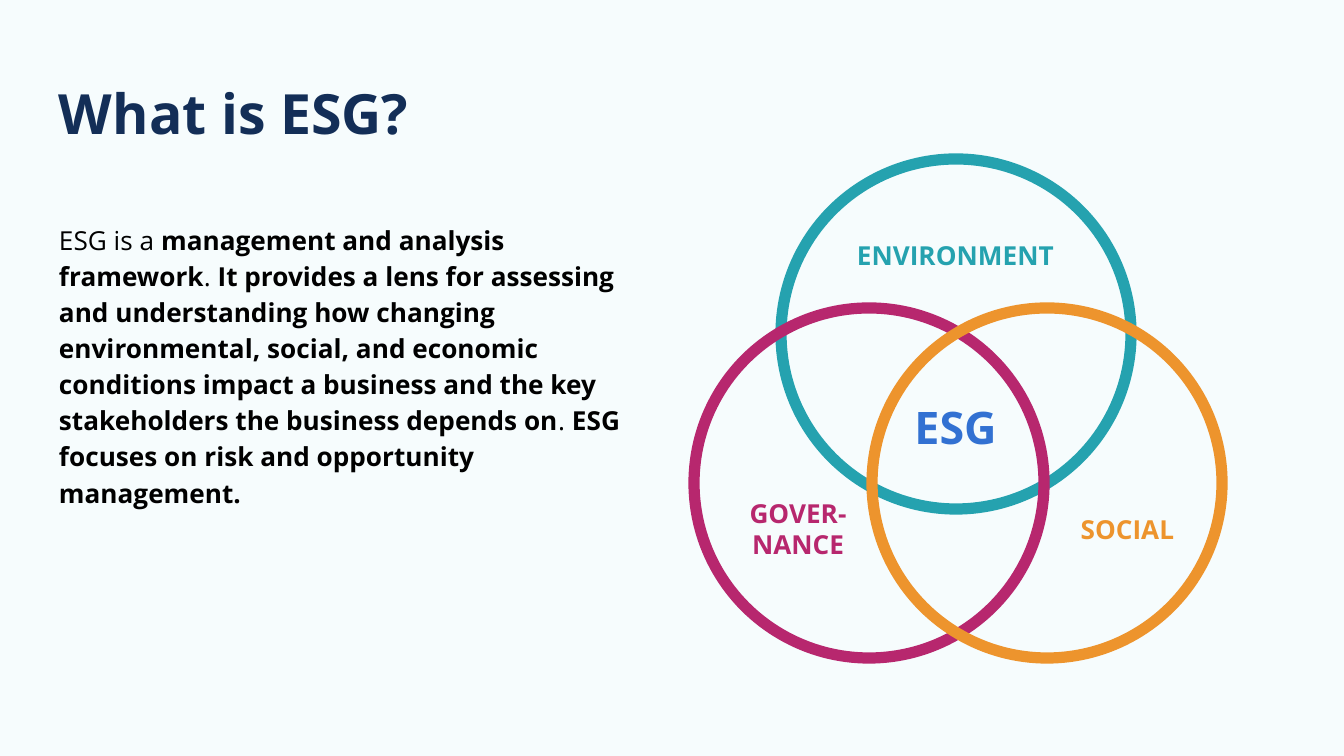
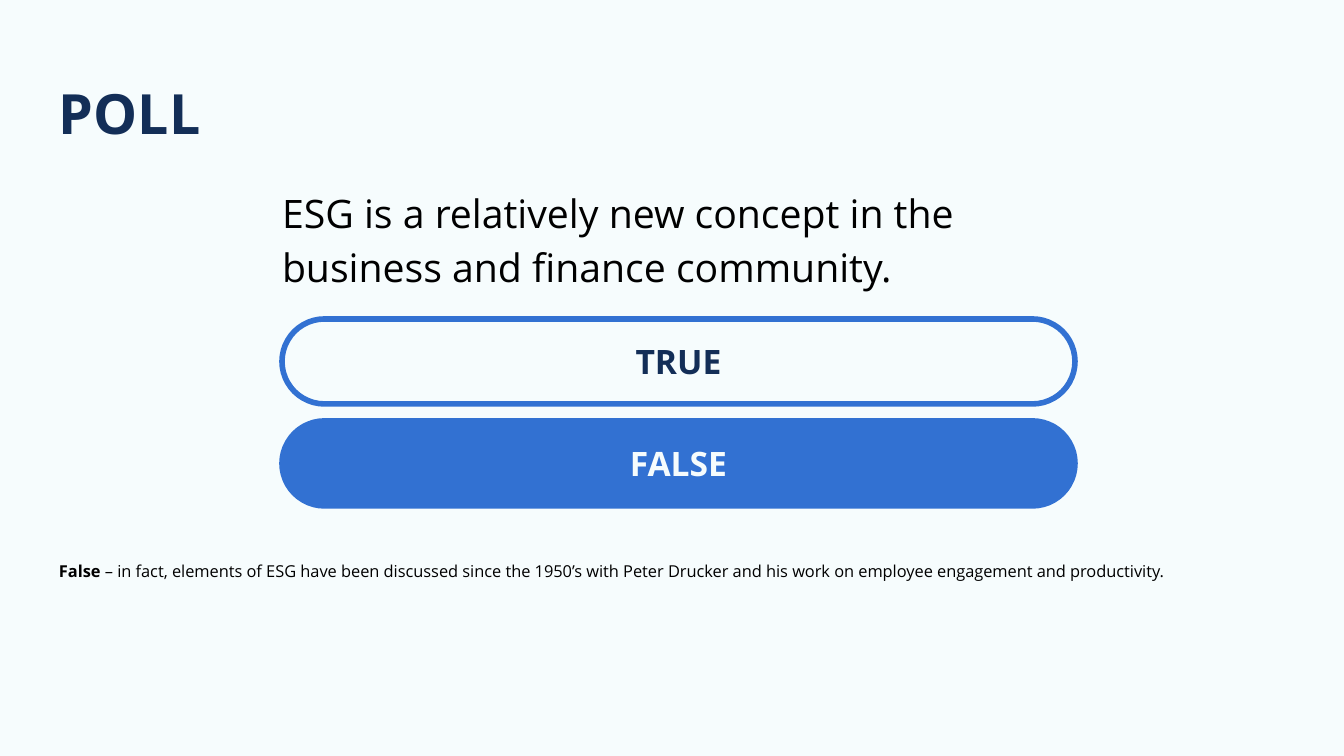
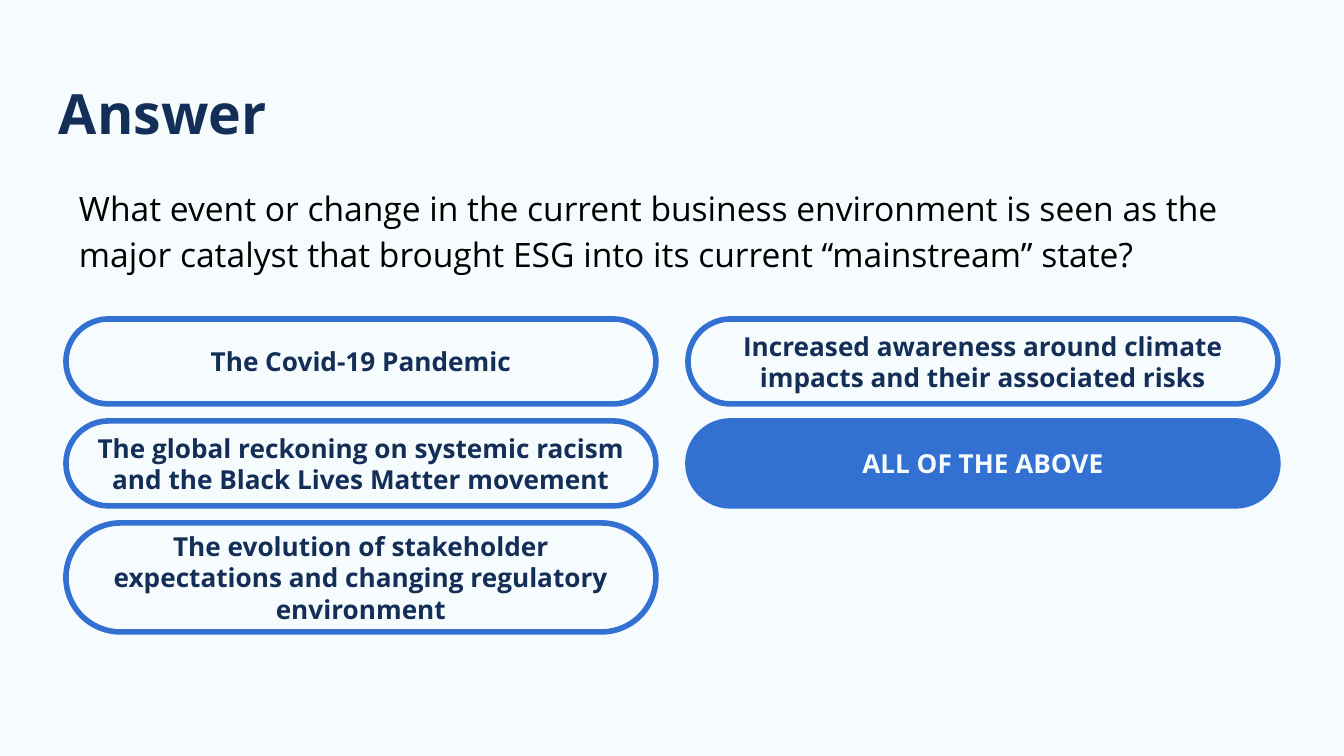
import pptx
import pptx.dml.color
import pptx.enum.shapes
import pptx.enum.text
import pptx.oxml.xmlchemy
import pptx.util
from lxml import etree

RGBColor = pptx.dml.color.RGBColor
MSO_SHAPE = pptx.enum.shapes.MSO_SHAPE
ANCHOR = pptx.enum.text.MSO_ANCHOR
ALIGN = pptx.enum.text.PP_ALIGN

EMU_PER_PX = 914400 / 134.4
SLIDE_WIDTH, SLIDE_HEIGHT = 1344, 756
INSET = 13
FONT = "Open Sans"

BACKGROUND = RGBColor(0xF6, 0xFC, 0xFD)
NAVY = RGBColor(0x13, 0x2E, 0x57)
BLUE = RGBColor(0x32, 0x71, 0xD2)
BLACK = RGBColor(0x00, 0x00, 0x00)
TEAL = RGBColor(0x25, 0xA2, 0xAF)
MAGENTA = RGBColor(0xB7, 0x27, 0x6E)
ORANGE = RGBColor(0xED, 0x94, 0x2D)

TITLE_BOX = (46, 66, 1253, 85)
CIRCLE = 350
PILL_TOP, PILL_HEIGHT, PILL_GAP = 319, 85, 17
PILL_PITCH = PILL_HEIGHT + PILL_GAP
TITLE_AND_CONTENT, TWO_CONTENT = 1, 3


def px(length):
    return pptx.util.Emu(round(length * EMU_PER_PX))


def place(shape, box):
    shape.left, shape.top, shape.width, shape.height = map(px, box)


def prepare_frame(shape, anchor=ANCHOR.TOP):
    frame = shape.text_frame
    frame.word_wrap = True
    frame.auto_size = pptx.enum.text.MSO_AUTO_SIZE.NONE
    frame.vertical_anchor = anchor
    frame.margin_left = frame.margin_right = px(INSET)
    frame.margin_top = frame.margin_bottom = px(INSET)
    return frame


def style(paragraph, size, color, bold=None, align=ALIGN.LEFT):
    paragraph.alignment = align
    font = paragraph.font
    font.name = FONT
    font.size = pptx.util.Pt(size)
    font.color.rgb = color
    font.bold = bold


def add_titled_slide(deck, layout, title):
    slide = deck.slides.add_slide(deck.slide_layouts[layout])
    heading = slide.shapes.title
    place(heading, TITLE_BOX)
    paragraph = prepare_frame(heading).paragraphs[0]
    paragraph.text = title
    style(paragraph, 29.7, NAVY, True)
    return slide


def fill_body(body, box, parts, size, line_spacing=1.15):
    """Write one unbulleted paragraph from (text, bold) parts."""
    place(body, box)
    paragraph = prepare_frame(body).paragraphs[0]
    paragraph.line_spacing = line_spacing
    paragraph.space_before = pptx.util.Pt(0)
    properties = paragraph._p.get_or_add_pPr()
    properties.set("marL", "0")
    properties.set("indent", "0")
    etree.SubElement(properties, pptx.oxml.ns.qn("a:buNone"))
    style(paragraph, size, BLACK)
    for text, bold in parts:
        run = paragraph.add_run()
        run.text = text
        run.font.bold = bold


def add_label(slide, box, lines, size, color):
    frame = prepare_frame(slide.shapes.add_textbox(*map(px, box)))
    frame.text = "\n".join(lines)
    for paragraph in frame.paragraphs:
        style(paragraph, size, color, True, ALIGN.CENTER)


def add_outline(slide, preset, box, color, width):
    shape = slide.shapes.add_shape(preset, *map(px, box))
    shape.shadow.inherit = False
    shape.fill.background()
    shape.line.color.rgb = color
    shape.line.width = pptx.util.Pt(width)
    return shape


def add_pill(slide, box, text, size, chosen=False):
    pill = add_outline(slide, MSO_SHAPE.ROUNDED_RECTANGLE, box, BLUE, 3)
    pill.adjustments[0] = 0.5
    if chosen:
        pill.fill.solid()
        pill.fill.fore_color.rgb = BLUE
    paragraph = prepare_frame(pill, ANCHOR.MIDDLE).paragraphs[0]
    paragraph.text = text
    style(paragraph, size, BACKGROUND if chosen else NAVY, True, ALIGN.CENTER)


def build_definition(deck):
    slide = add_titled_slide(deck, TITLE_AND_CONTENT, "What is ESG?")
    fill_body(slide.placeholders[1], (46, 207, 590, 442), [
        ("ESG is a ", False),
        ("management and analysis framework", True),
        (". ", False),
        ("It provides a lens for assessing and understanding how changing "
         "environmental, social, and economic conditions impact a business "
         "and the key stakeholders the business depends on", True),
        (". ", False),
        ("ESG focuses on risk and opportunity management.", True),
    ], 14)
    for left, top, color in [(781, 159, TEAL), (694, 308, MAGENTA), (872, 308, ORANGE)]:
        add_outline(slide, MSO_SHAPE.OVAL, (left, top, CIRCLE, CIRCLE), color, 6)
    add_label(slide, (823, 226, 265, 59), ["ENVIRONMENT"], 14, TEAL)
    add_label(slide, (724, 484, 148, 90), ["GOVER-", "NANCE"], 14, MAGENTA)
    add_label(slide, (995, 500, 265, 59), ["SOCIAL"], 14, ORANGE)
    add_label(slide, (874, 387, 163, 82), ["ESG"], 24, BLUE)


def build_poll(deck):
    slide = add_titled_slide(deck, TWO_CONTENT, "POLL")
    statement, explanation = slide.placeholders[1], slide.placeholders[2]
    fill_body(statement, (269, 169, 805, 129), [
        ("ESG is a relatively new concept in the business and finance community.", False),
    ], 21)
    for row, choice in enumerate(["TRUE", "FALSE"]):
        box = (282, PILL_TOP + row * PILL_PITCH, 793, PILL_HEIGHT)
        add_pill(slide, box, choice, 18, chosen=choice == "FALSE")
    fill_body(explanation, (46, 550, 1253, 105), [
        ("False", True),
        (" – in fact, elements of ESG have been discussed since the 1950’s with "
         "Peter Drucker and his work on employee engagement and productivity.", False),
    ], 8.8, line_spacing=0.95)


def build_answer(deck):
    slide = add_titled_slide(deck, TITLE_AND_CONTENT, "Answer")
    fill_body(slide.placeholders[1], (66, 169, 1212, 114), [
        ("What event or change in the current business environment is seen as the "
         "major catalyst that brought ESG into its current “mainstream” state?", False),
    ], 18)
    columns = [
        (66, [
            ("The Covid-19 Pandemic", PILL_HEIGHT),
            ("The global reckoning on systemic racism and the Black Lives Matter movement",
             PILL_HEIGHT),
            ("The evolution of stakeholder expectations and changing regulatory environment",
             109),
        ]),
        (688, [
            ("Increased awareness around climate impacts and their associated risks",
             PILL_HEIGHT),
            ("ALL OF THE ABOVE", PILL_HEIGHT),
        ]),
    ]
    for left, choices in columns:
        for row, (choice, height) in enumerate(choices):
            box = (left, PILL_TOP + row * PILL_PITCH, 590, height)
            add_pill(slide, box, choice, 14, chosen=choice == "ALL OF THE ABOVE")


def main():
    deck = pptx.Presentation()
    deck.slide_width, deck.slide_height = px(SLIDE_WIDTH), px(SLIDE_HEIGHT)
    backdrop = deck.slide_master.background.fill
    backdrop.solid()
    backdrop.fore_color.rgb = BACKGROUND
    build_definition(deck)
    build_poll(deck)
    build_answer(deck)
    deck.save("out.pptx")


if __name__ == "__main__":
    main()
